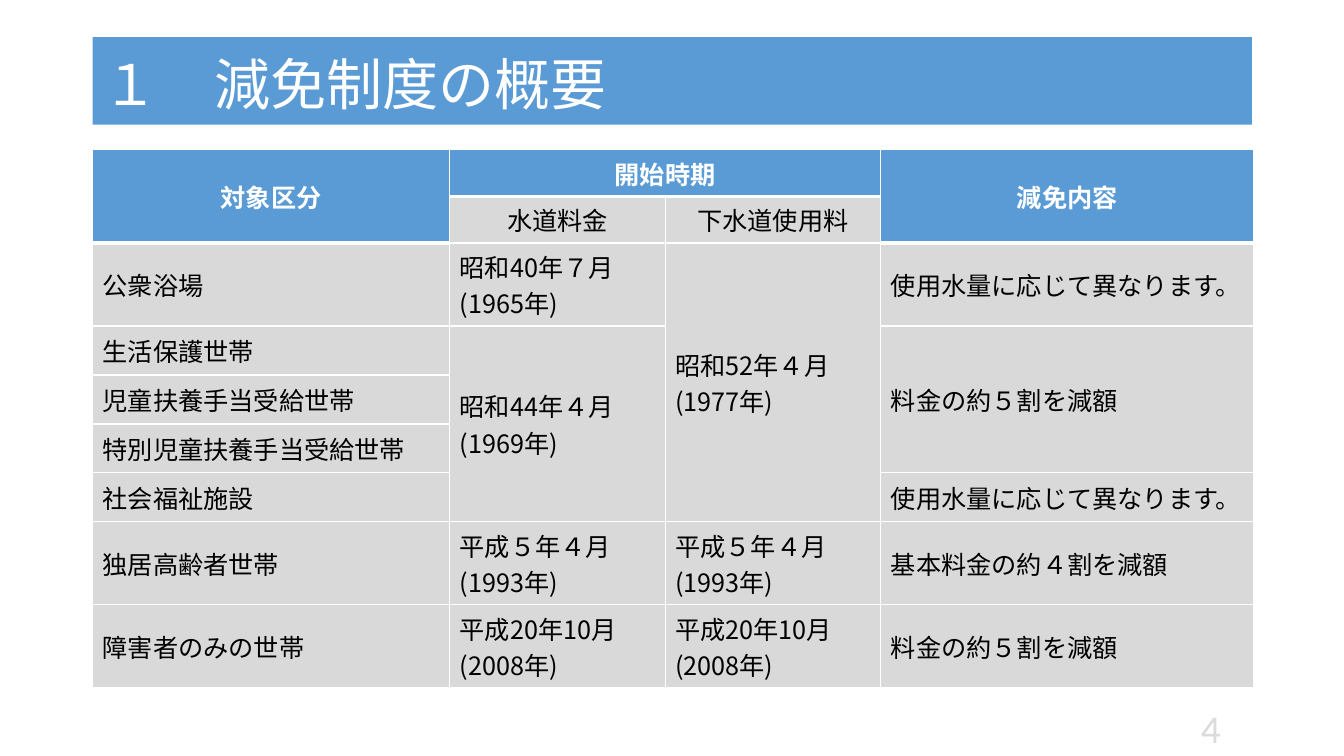
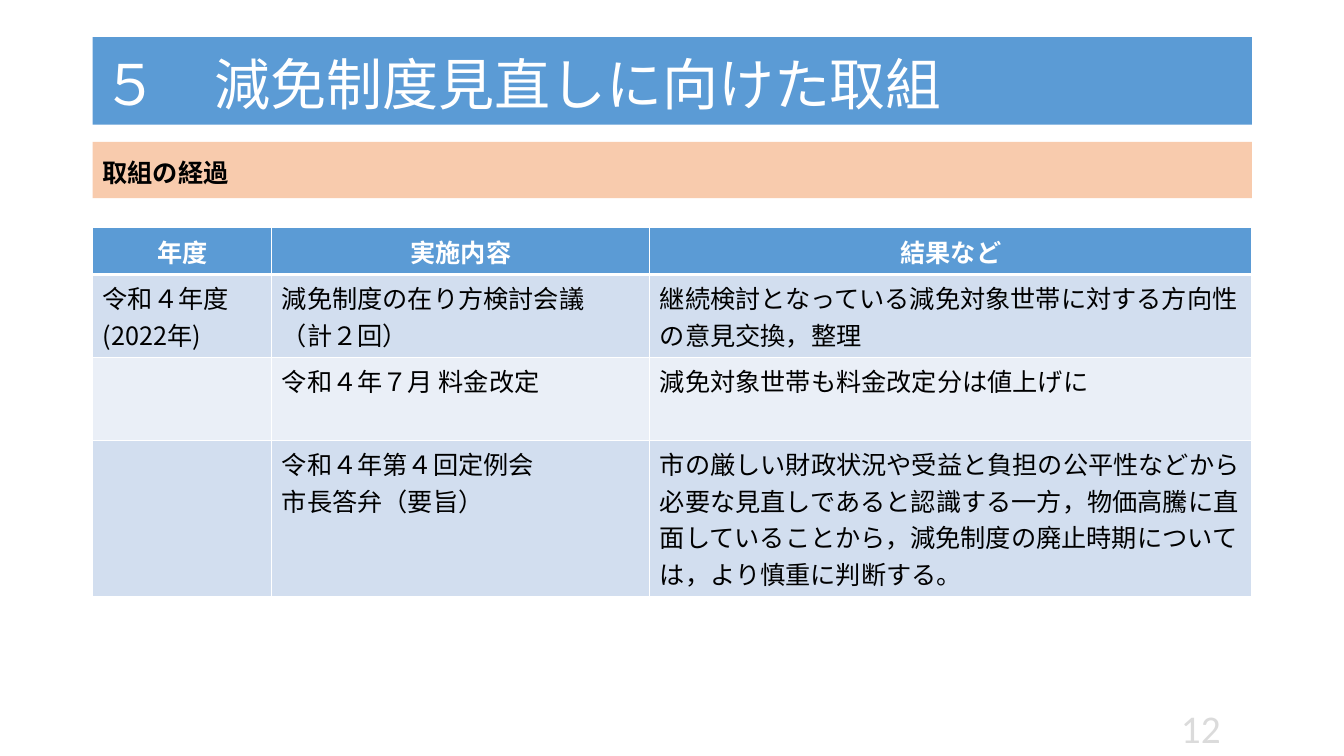
"""Build two slides on a fee reduction scheme: an overview table and a progress table."""
from pptx import Presentation
from pptx.dml.color import RGBColor
from pptx.enum.shapes import MSO_SHAPE
from pptx.enum.text import MSO_ANCHOR, MSO_AUTO_SIZE, PP_ALIGN
from pptx.oxml.ns import qn
from pptx.util import Pt
from lxml.etree import SubElement

COLOURS = {
    "blue": "5B9BD5", "peach": "F8CBAD", "grey": "D9D9D9", "band": "D2DEEF",
    "pale": "EAEFF7", "number": "DBDBDB", "white": "FFFFFF", "black": "000000",
}
JAPANESE = "Noto Sans CJK JP"
LEFT, WIDTH = 66.2, 828
ONE_LINE, TWO_LINES, FOUR_LINES = 33.3, 59.3, 111.4
CELL_STYLES = {
    "H": ("blue", "white", True, PP_ALIGN.CENTER, 3),
    "S": ("grey", "black", False, PP_ALIGN.CENTER, 1),
    "G": ("grey", "black", False, PP_ALIGN.LEFT, 1),
    "B": ("band", "black", False, PP_ALIGN.LEFT, 1),
    "P": ("pale", "black", False, PP_ALIGN.LEFT, 1),
}


def write(frame, text, size, colour, bold=False, align=PP_ALIGN.LEFT, font=JAPANESE):
    """Write each line of text as one formatted paragraph."""
    frame.word_wrap = True
    for index, line in enumerate(text.split("\n")):
        para = frame.paragraphs[0] if index == 0 else frame.add_paragraph()
        para.alignment = align
        span = para.add_run()
        span.text = line
        span.font.size = Pt(size)
        span.font.bold = bold
        span.font.name = font
        span.font.color.rgb = RGBColor.from_string(COLOURS[colour])
        SubElement(span.font._element, qn("a:ea"), typeface=font)


def add_grid(page, top, widths, heights, styles, rows, merges, anchor):
    """Add a table whose style letters give each cell its look."""
    table = page.shapes.add_table(
        len(heights), len(widths), Pt(LEFT), Pt(top), Pt(sum(widths)), Pt(sum(heights))
    ).table
    table.first_row = table.horz_banding = False
    for column, width in zip(table.columns, widths):
        column.width = Pt(width)
    for row, height in zip(table.rows, heights):
        row.height = Pt(height)
    for row_index, (letters, texts) in enumerate(zip(styles, rows)):
        for column_index, (letter, text) in enumerate(zip(letters, texts)):
            fill, colour, bold, align, bottom = CELL_STYLES[letter]
            cell = table.cell(row_index, column_index)
            cell.vertical_anchor = anchor
            borders = {"lnL": 1, "lnR": 1, "lnT": 1, "lnB": bottom}
            if row_index:
                del borders["lnT"]
            for side, weight in borders.items():
                line = SubElement(cell._tc.tcPr, qn("a:" + side), w=str(Pt(weight)))
                paint = SubElement(line, qn("a:solidFill"))
                SubElement(paint, qn("a:srgbClr"), val=COLOURS["white"])
            cell.fill.solid()
            cell.fill.fore_color.rgb = RGBColor.from_string(COLOURS[fill])
            if text:
                write(cell.text_frame, text, 18, colour, bold, align)
    for first, last in merges:
        table.cell(*first).merge(table.cell(*last))


deck = Presentation()
deck.slide_width, deck.slide_height = Pt(960), Pt(540)

pages = []
for heading, number in [("１　減免制度の概要", "4"), ("５　減免制度見直しに向けた取組", "12")]:
    page = deck.slides.add_slide(deck.slide_layouts[5])
    pages.append(page)
    title = page.shapes.title
    title.left, title.top, title.width, title.height = Pt(LEFT), Pt(26.6), Pt(WIDTH), Pt(62.4)
    title.fill.solid()
    title.fill.fore_color.rgb = RGBColor.from_string(COLOURS["blue"])
    frame = title.text_frame
    frame.auto_size = MSO_AUTO_SIZE.NONE
    frame.vertical_anchor = MSO_ANCHOR.MIDDLE
    frame.margin_top, frame.margin_bottom = Pt(12), Pt(3)
    write(frame, heading, 40, "white")
    frame.paragraphs[0].line_spacing = 0.9

    box = page.shapes.add_textbox(Pt(663), Pt(505.5), Pt(216), Pt(28.8))
    box.text_frame.vertical_anchor = MSO_ANCHOR.MIDDLE
    write(box.text_frame, number, 28, "number", align=PP_ALIGN.RIGHT, font="Calibri")

overview, progress = pages

add_grid(
    overview, 107,
    [255, 154, 154, 266.4],
    [ONE_LINE] * 2 + [TWO_LINES] + [35] * 4 + [TWO_LINES] * 2,
    ["HHHH", "HSSH"] + ["GGGG"] * 7,
    [
        ["対象区分", "開始時期", "", "減免内容"],
        ["", "水道料金", "下水道使用料", ""],
        ["公衆浴場", "昭和40年７月(1965年)", "昭和52年４月\n(1977年)", "使用水量に応じて異なります。"],
        ["生活保護世帯", "昭和44年４月\n(1969年)", "", "料金の約５割を減額"],
        ["児童扶養手当受給世帯", "", "", ""],
        ["特別児童扶養手当受給世帯", "", "", ""],
        ["社会福祉施設", "", "", "使用水量に応じて異なります。"],
        ["独居高齢者世帯", "平成５年４月\n(1993年)", "平成５年４月\n(1993年)", "基本料金の約４割を減額"],
        ["障害者のみの世帯", "平成20年10月\n(2008年)", "平成20年10月\n(2008年)", "料金の約５割を減額"],
    ],
    [
        ((0, 0), (1, 0)), ((0, 1), (0, 2)), ((0, 3), (1, 3)),
        ((2, 2), (6, 2)), ((3, 1), (6, 1)), ((3, 3), (5, 3)),
    ],
    MSO_ANCHOR.MIDDLE,
)

subtitle = progress.shapes.add_shape(
    MSO_SHAPE.RECTANGLE, Pt(LEFT), Pt(101.4), Pt(WIDTH), Pt(40.2)
)
subtitle.shadow.inherit = False
subtitle.fill.solid()
subtitle.fill.fore_color.rgb = RGBColor.from_string(COLOURS["peach"])
subtitle.line.fill.background()
subtitle.text_frame.vertical_anchor = MSO_ANCHOR.MIDDLE
subtitle.text_frame.margin_top, subtitle.text_frame.margin_bottom = Pt(6), Pt(3)
write(subtitle.text_frame, "取組の経過", 18, "black", bold=True)

add_grid(
    progress, 162.7,
    [128, 270, 430],
    [ONE_LINE, TWO_LINES, TWO_LINES, FOUR_LINES],
    ["HHH", "BBB", "PPP", "BBB"],
    [
        ["年度", "実施内容", "結果など"],
        [
            "令和４年度\n(2022年)",
            "減免制度の在り方検討会議\n（計２回）",
            "継続検討となっている減免対象世帯に対する方向性の意見交換，整理",
        ],
        ["", "令和４年７月 料金改定", "減免対象世帯も料金改定分は値上げに"],
        [
            "",
            "令和４年第４回定例会\n市長答弁（要旨）",
            "市の厳しい財政状況や受益と負担の公平性などから必要な見直しであると認識する一方，"
            "物価高騰に直面していることから，減免制度の廃止時期については，より慎重に判断する。",
        ],
    ],
    [],
    MSO_ANCHOR.TOP,
)

deck.save("out.pptx")
